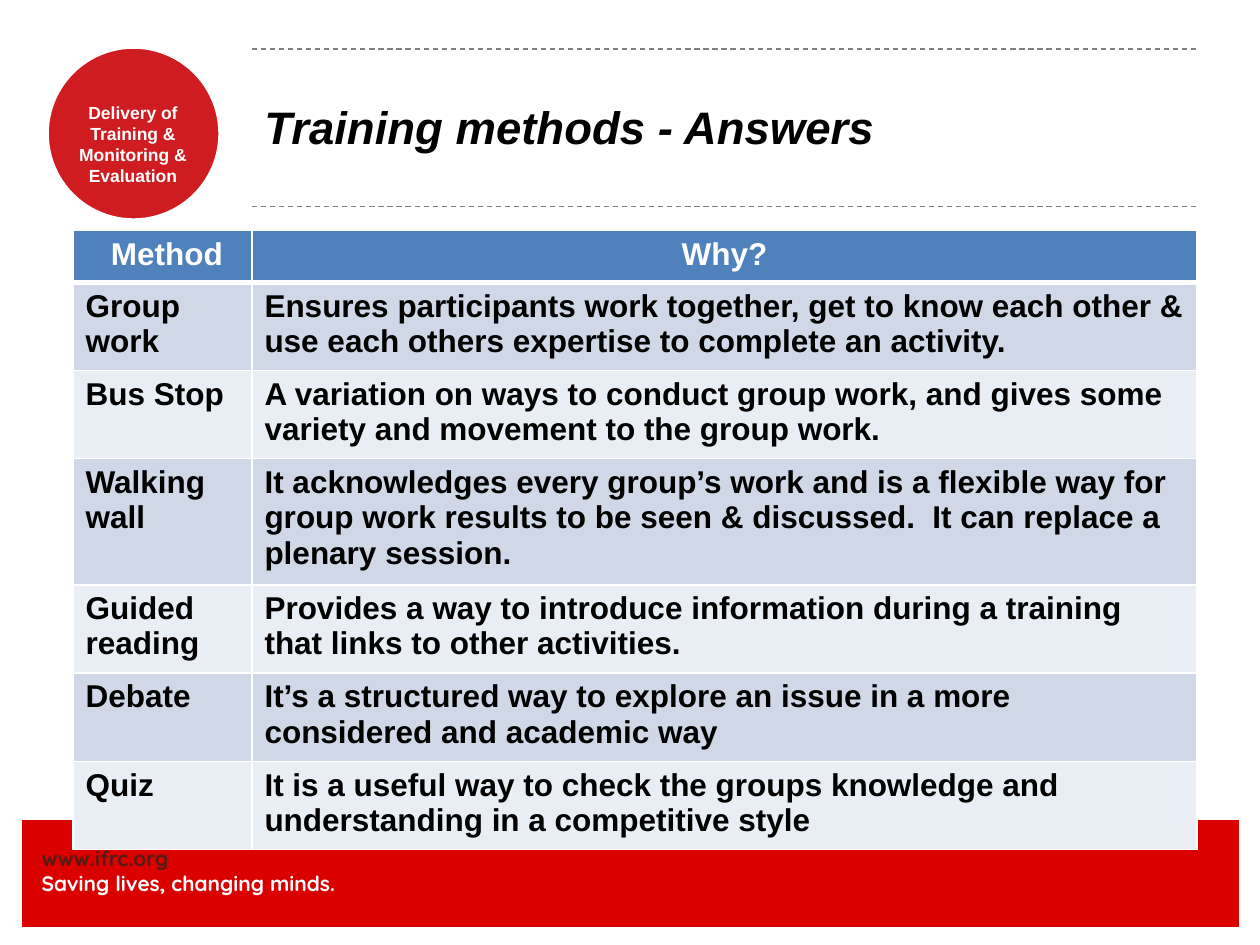
"""Build the training methods answers slide with its table, badge and footer."""
import lxml.etree
import pptx
import pptx.dml.color
import pptx.enum.dml
import pptx.enum.shapes
import pptx.enum.text
import pptx.oxml.ns
import pptx.util

Inches = pptx.util.Inches
Pt = pptx.util.Pt
RGBColor = pptx.dml.color.RGBColor
Align = pptx.enum.text.PP_ALIGN
Anchor = pptx.enum.text.MSO_ANCHOR
Shapes = pptx.enum.shapes.MSO_SHAPE
qn = pptx.oxml.ns.qn

WHITE = RGBColor(0xFF, 0xFF, 0xFF)
BLACK = RGBColor(0x00, 0x00, 0x00)
GREY = RGBColor(0x80, 0x80, 0x80)
FOOTER_RED = RGBColor(0xDB, 0x00, 0x00)
BADGE_RED = RGBColor(0xCF, 0x1C, 0x21)
BROWN = RGBColor(0x55, 0x1C, 0x15)
HEADER_BLUE = RGBColor(0x4F, 0x81, 0xBD)
BAND_DARK = RGBColor(0xD0, 0xD8, 0xE8)
BAND_LIGHT = RGBColor(0xE9, 0xED, 0xF4)


def write(paragraph, text, color, align=Align.LEFT, **formats):
    paragraph.alignment = align
    run = paragraph.add_run()
    run.text = text
    run.font.color.rgb = color
    for name, value in {"name": "Arial", "bold": True, **formats}.items():
        setattr(run.font, name, value)


def add_text_box(slide, box, margin, anchor, auto_size):
    frame = slide.shapes.add_textbox(*map(Inches, box)).text_frame
    formats = {"word_wrap": True, "vertical_anchor": anchor, "auto_size": auto_size}
    for side in ("left", "right", "top", "bottom"):
        if margin is not None:
            formats[f"margin_{side}"] = margin
    for name, value in formats.items():
        setattr(frame, name, value)
    return frame


presentation = pptx.Presentation()
presentation.slide_width = Inches(10)
presentation.slide_height = Inches(7.5)
slide = presentation.slides.add_slide(presentation.slide_layouts[6])

for kind, box, fill, width in (
    (Shapes.RECTANGLE, (0.17, 6.5, 9.67, 0.86), FOOTER_RED, 0.75),
    (Shapes.OVAL, (0.37, 0.37, 1.38, 1.38), BADGE_RED, 2.5),
):
    shape = slide.shapes.add_shape(kind, *map(Inches, box))
    shape.shadow.inherit = False
    shape.fill.solid()
    shape.fill.fore_color.rgb = fill
    shape.line.color.rgb = WHITE
    shape.line.width = Pt(width)

grow = pptx.enum.text.MSO_AUTO_SIZE.SHAPE_TO_FIT_TEXT
footer = add_text_box(slide, (0.33, 6.71, 3.42, 0.4), 0, Anchor.TOP, grow)
write(footer.paragraphs[0], "www.ifrc.org", BROWN, name="Quicksand", size=Pt(12))
write(footer.add_paragraph(), "Saving lives, changing minds.", WHITE,
      name="Quicksand", size=Pt(12))

badge = add_text_box(slide, (0.43, 0.81, 1.25, 0.67), 0, Anchor.TOP, grow)
write(badge.paragraphs[0], "Delivery of Training & Monitoring & Evaluation", WHITE,
      Align.CENTER, size=Pt(10))

for y in (0.39, 1.64):
    rule = slide.shapes.add_connector(
        pptx.enum.shapes.MSO_CONNECTOR.STRAIGHT,
        Inches(2), Inches(y), Inches(9.5), Inches(y))
    rule.line.color.rgb = GREY
    rule.line.width = Pt(0.75)
    rule.line.dash_style = pptx.enum.dml.MSO_LINE.DASH
    lxml.etree.SubElement(rule.element.spPr, qn("a:effectLst"))

title = add_text_box(slide, (2, 0.38, 7.5, 1.25), None, Anchor.MIDDLE,
                     pptx.enum.text.MSO_AUTO_SIZE.NONE)
write(title.paragraphs[0], "Training methods - Answers", BLACK, size=Pt(26), italic=True)

methods = (
    (" Method", "Why?"),
    ("Group work", "Ensures participants work together, get to know each other & "
     "use each others expertise to complete an activity."),
    ("Bus Stop", "A variation on ways to conduct group work, and gives some "
     "variety and movement to the group work."),
    ("Walking wall", "It acknowledges every group’s work and is a flexible way for "
     "group work results to be seen & discussed.  It can replace a plenary session."),
    ("Guided reading", "Provides a way to introduce information during a training "
     "that links to other activities."),
    ("Debate", "It’s a structured way to explore an issue in a more "
     "considered and academic way"),
    ("Quiz", "It is a useful way to check the groups knowledge and "
     "understanding in a competitive style"),
)
table = slide.shapes.add_table(
    len(methods), 2, Inches(0.58), Inches(1.83), Inches(8.92), Inches(2.87)).table
for column, width in zip(table.columns, (1.42, 7.5)):
    column.width = Inches(width)

for row_index, texts in enumerate(methods):
    table.rows[row_index].height = Inches(0.41)
    if row_index == 0:
        fill, color, align = HEADER_BLUE, WHITE, Align.CENTER
    else:
        fill = BAND_DARK if row_index % 2 else BAND_LIGHT
        color, align = BLACK, Align.LEFT
    for column_index, text in enumerate(texts):
        cell = table.cell(row_index, column_index)
        cell.fill.solid()
        cell.fill.fore_color.rgb = fill
        write(cell.text_frame.paragraphs[0], text, color, align, size=Pt(18))
        properties = cell._tc.get_or_add_tcPr()
        for position, side in enumerate(("lnL", "lnR", "lnT", "lnB")):
            thick = (row_index, side) in ((0, "lnB"), (1, "lnT"))
            border = lxml.etree.Element(qn(f"a:{side}"), w=str(Pt(3 if thick else 1)))
            solid = lxml.etree.SubElement(border, qn("a:solidFill"))
            lxml.etree.SubElement(solid, qn("a:srgbClr"), val=str(WHITE))
            properties.insert(position, border)

presentation.save("out.pptx")
